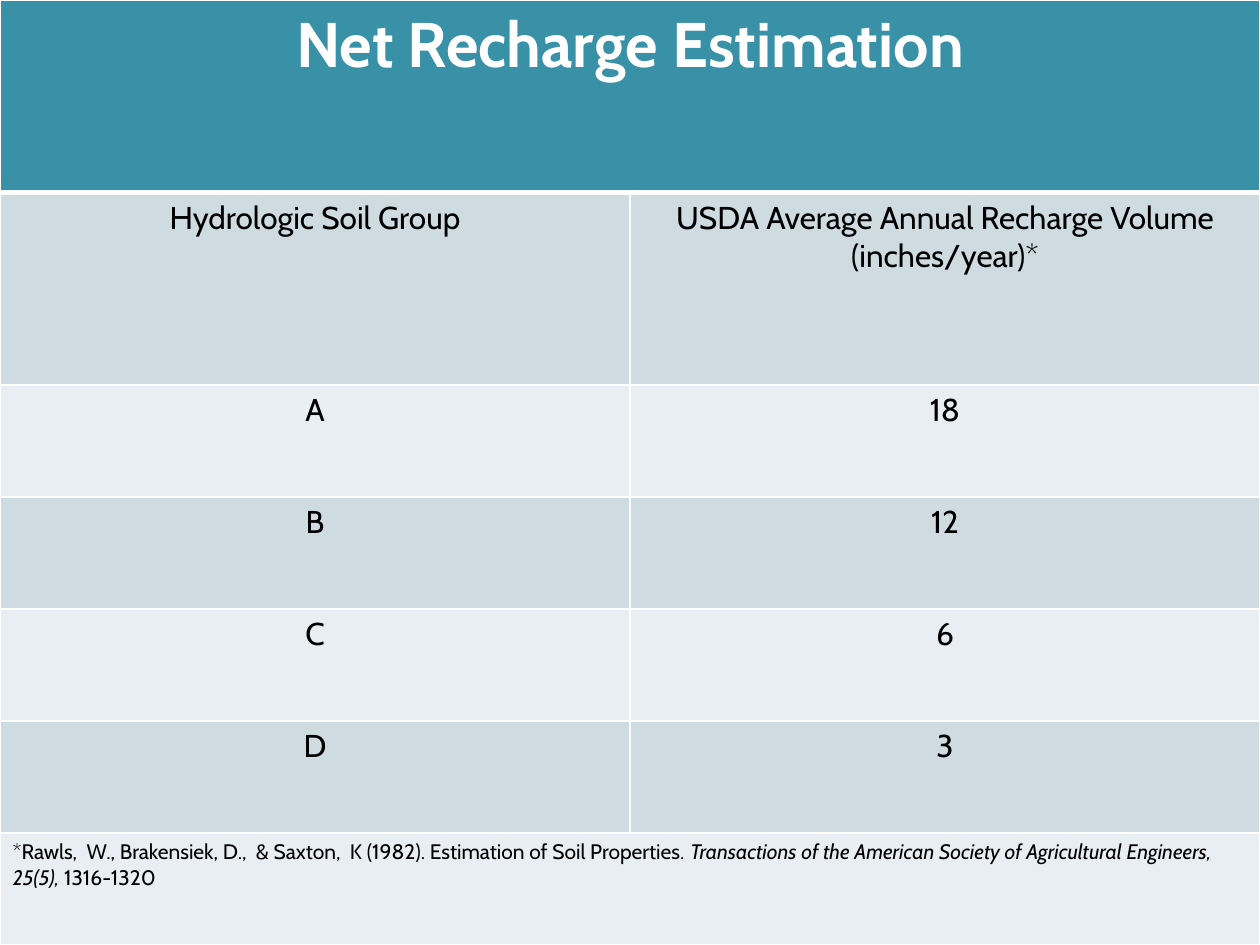
import pptx
import pptx.dml.color
import pptx.enum.text
import pptx.oxml
import pptx.oxml.ns
import pptx.util
from pptx.dml.color import RGBColor

Pt = pptx.util.Pt
CENTER = pptx.enum.text.PP_ALIGN.CENTER
LEFT = pptx.enum.text.PP_ALIGN.LEFT

WHITE = RGBColor(0xFF, 0xFF, 0xFF)
BLACK = RGBColor(0x00, 0x00, 0x00)
TEAL = RGBColor(0x38, 0x91, 0xA7)
DARK_BAND = RGBColor(0xCE, 0xDC, 0xE1)
LIGHT_BAND = RGBColor(0xE8, 0xEE, 0xF1)

FONT = "Cabin"
WIDTH, HEIGHT = 720, 540
ROW_HEIGHTS = [110] * 2 + [64] * 5

TITLE = "Net Recharge Estimation"
RECHARGE_ROWS = [
    ("Hydrologic Soil Group", "USDA Average Annual Recharge Volume (inches/year)*"),
    ("A", "18"),
    ("B", "12"),
    ("C", "6"),
    ("D", "3"),
]
# Each part of the citation: text, italic
CITATION = [
    ("*Rawls,  W., Brakensiek, D.,  & Saxton,  K (1982). Estimation of Soil Properties. ", False),
    ("Transactions of the American Society of Agricultural Engineers, 25(5), ", True),
    ("1316-1320", False),
]


def set_borders(cell, top=1, bottom=1):
    """Draw white cell borders; they must precede the fill in the XML."""
    properties = cell._tc.get_or_add_tcPr()
    widths = {"lnL": 1, "lnR": 1, "lnT": top, "lnB": bottom}
    for index, (side, width) in enumerate(widths.items()):
        line = pptx.oxml.parse_xml(
            f'<a:{side} {pptx.oxml.ns.nsdecls("a")} w="{Pt(width)}">'
            f'<a:solidFill><a:srgbClr val="{WHITE}"/></a:solidFill></a:{side}>'
        )
        properties.insert(index, line)


def style_row(table, row, fill):
    """Fill and outline a row; the title is underlined more heavily."""
    for cell in table.rows[row].cells:
        cell.fill.solid()
        cell.fill.fore_color.rgb = fill
        set_borders(cell, top=3 if row == 1 else 1, bottom=3 if row == 0 else 1)


def write_cell(cell, parts, size, color=BLACK, bold=False, alignment=CENTER):
    """Write (text, italic) parts as one paragraph."""
    paragraph = cell.text_frame.paragraphs[0]
    paragraph.alignment = alignment
    font = paragraph.font
    font.name, font.size, font.bold = FONT, Pt(size), bold
    font.color.rgb = color
    for text, italic in parts:
        run = paragraph.add_run()
        run.text = text
        run.font.name, run.font.size, run.font.bold = FONT, Pt(size), bold
        run.font.italic = italic
        run.font.color.rgb = color


def add_recharge_table(slide):
    shape = slide.shapes.add_table(len(ROW_HEIGHTS), 2, 0, 0, Pt(WIDTH), Pt(HEIGHT))
    table = shape.table
    for column in table.columns:
        column.width = Pt(WIDTH / 2)
    for row, height in enumerate(ROW_HEIGHTS):
        table.rows[row].height = Pt(height)
        band = DARK_BAND if row % 2 else LIGHT_BAND
        style_row(table, row, TEAL if row == 0 else band)

    # Title and citation span both columns
    last = len(ROW_HEIGHTS) - 1
    for row in (0, last):
        table.cell(row, 0).merge(table.cell(row, 1))
    write_cell(table.cell(0, 0), [(TITLE, False)], 36, WHITE, bold=True)
    write_cell(table.cell(last, 0), CITATION, 12, alignment=LEFT)

    # Column headings and values
    for row, values in enumerate(RECHARGE_ROWS, start=1):
        for column, text in enumerate(values):
            write_cell(table.cell(row, column), [(text, False)], 18)


def main():
    presentation = pptx.Presentation()
    presentation.slide_width = Pt(WIDTH)
    presentation.slide_height = Pt(HEIGHT)
    slide = presentation.slides.add_slide(presentation.slide_layouts[6])
    add_recharge_table(slide)
    presentation.save("out.pptx")


if __name__ == "__main__":
    main()
